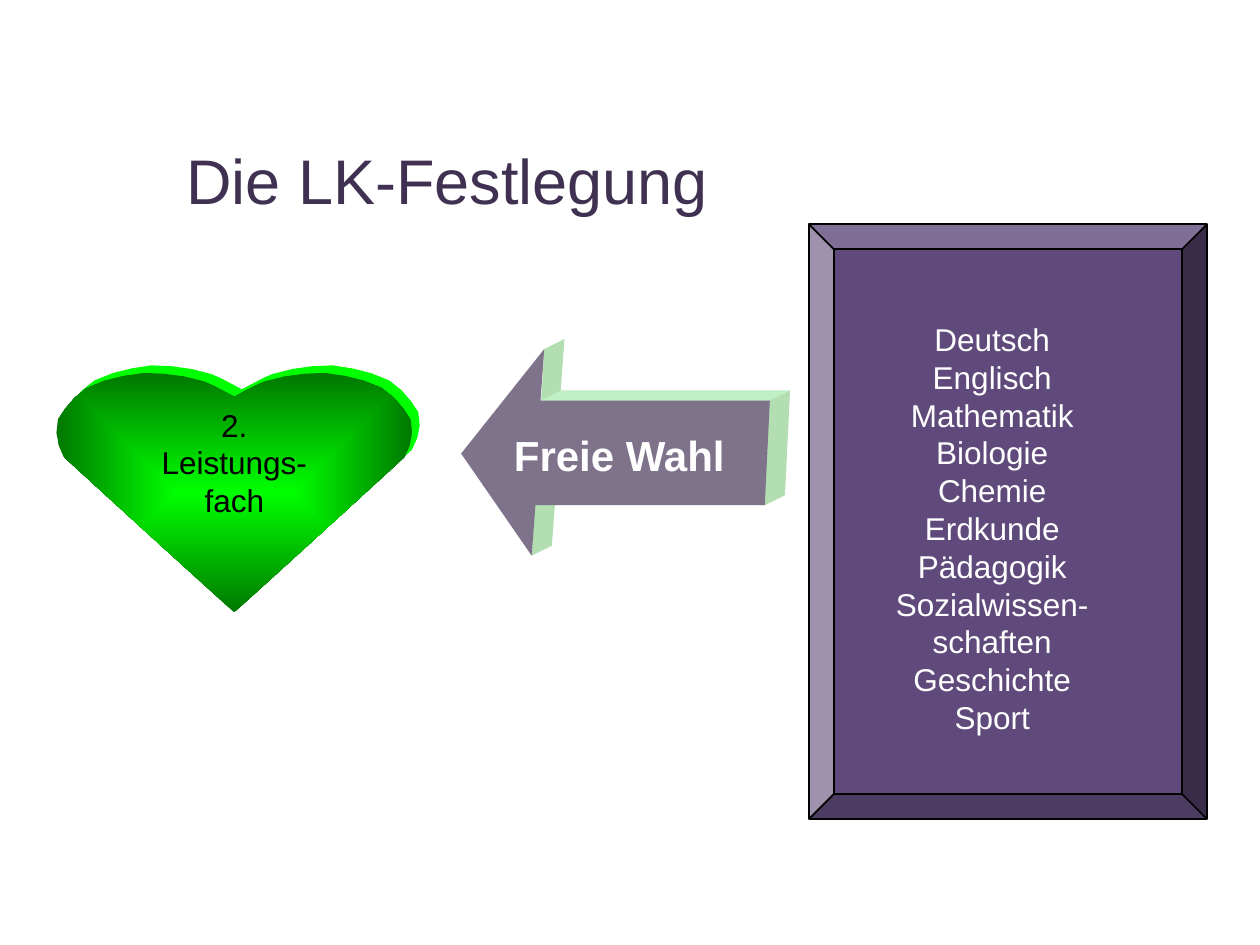
from dataclasses import dataclass

from lxml import etree
from pptx import Presentation
from pptx.dml.color import RGBColor
from pptx.enum import shapes, text
from pptx.oxml import ns
from pptx.util import Inches, Pt

Point = tuple[float, float]

BLACK = RGBColor(0x00, 0x00, 0x00)
WHITE = RGBColor(0xFF, 0xFF, 0xFF)
TITLE_PURPLE = RGBColor(0x40, 0x31, 0x52)
PANEL_PURPLE = RGBColor(0x60, 0x4A, 0x7B)
ARROW_PURPLE = RGBColor(0x7F, 0x72, 0x8B)
ARROW_SIDE = RGBColor(0xB2, 0xDE, 0xB2)
ARROW_TOP = RGBColor(0xC0, 0xF0, 0xC5)
BRIGHT_GREEN = RGBColor(0x00, 0xFF, 0x00)
DARK_GREEN = RGBColor(0x00, 0x78, 0x00)

HEART_NOTCH = (1.86, 3.15)
HEART_TIP = (1.86, 4.86)
HEART_LOBE = [
    ((1.8, 3.12), (1.68, 3.05), (1.62, 3.03)),
    ((1.46, 2.98), (1.31, 2.96), (1.14, 2.96)),
    ((0.98, 2.98), (0.83, 3.01), (0.69, 3.08)),
    ((0.58, 3.15), (0.51, 3.25), (0.46, 3.33)),
    ((0.43, 3.44), (0.46, 3.54), (0.51, 3.63)),
]
HEART_DEPTH = (0.06, -0.06)

ARROW = [(3.66, 3.6), (4.32, 2.77), (4.29, 3.18), (6.11, 3.18),
         (6.07, 4.01), (4.25, 4.01), (4.22, 4.41)]
ARROW_DEPTH = (0.16, -0.08)

SUBJECTS = ["Deutsch", "Englisch", "Mathematik", "Biologie", "Chemie", "Erdkunde",
            "Pädagogik", "Sozialwissen-", "schaften", "Geschichte", "Sport"]


@dataclass
class Label:
    box: tuple[float, float, float, float]
    lines: list[str]
    size: int
    color: RGBColor
    bold: bool = False
    centered: bool = False
    wrap: bool = False


LABELS = [
    Label((1.38, 1.07, 4.38, 0.71), ["Die LK-Festlegung"], 36, TITLE_PURPLE),
    Label((6.65, 2.49, 2.45, 3.43), SUBJECTS, 18, WHITE, centered=True, wrap=True),
    Label((3.98, 3.36, 1.89, 0.5), ["Freie Wahl"], 24, WHITE, bold=True),
]


def shift(points: list[Point], depth: Point) -> list[Point]:
    return [(x + depth[0], y + depth[1]) for x, y in points]


def heart_outline(steps: int = 3) -> list[Point]:
    left = [HEART_NOTCH]
    for first, second, end in HEART_LOBE:
        curve = (left[-1], first, second, end)
        for step in range(1, steps + 1):
            t = step / steps
            weights = ((1 - t) ** 3, 3 * t * (1 - t) ** 2, 3 * t * t * (1 - t), t ** 3)
            left.append(tuple(sum(w * p[axis] for w, p in zip(weights, curve))
                              for axis in (0, 1)))
    right = [(2 * HEART_NOTCH[0] - x, y) for x, y in reversed(left[1:])]
    return left + [HEART_TIP] + right


def add_polygon(slide, points: list[Point], color: RGBColor):
    corners = [(Inches(x), Inches(y)) for x, y in points]
    builder = slide.shapes.build_freeform(*corners[0])
    builder.add_line_segments(corners[1:], close=True)
    polygon = builder.convert_to_shape()
    polygon.shadow.inherit = False
    polygon.fill.solid()
    polygon.fill.fore_color.rgb = color
    polygon.line.fill.background()
    return polygon


def write_lines(frame, lines: list[str], size: int, color: RGBColor,
                bold: bool, centered: bool) -> None:
    for index, line in enumerate(lines):
        paragraph = frame.add_paragraph() if index else frame.paragraphs[0]
        paragraph.text = line
        paragraph.alignment = text.PP_ALIGN.CENTER if centered else text.PP_ALIGN.LEFT
        paragraph.font.name = "Arial"
        paragraph.font.size = Pt(size)
        paragraph.font.bold = bold
        paragraph.font.color.rgb = color


def add_label(slide, label: Label) -> None:
    frame = slide.shapes.add_textbox(*map(Inches, label.box)).text_frame
    frame.word_wrap = label.wrap
    write_lines(frame, label.lines, label.size, label.color, label.bold, label.centered)


def add_heart(slide) -> None:
    outline = heart_outline()
    add_polygon(slide, shift(outline, HEART_DEPTH), BRIGHT_GREEN)
    heart = add_polygon(slide, outline, DARK_GREEN)
    heart.fill.gradient()
    for stop, color in zip(heart.fill.gradient_stops, (BRIGHT_GREEN, DARK_GREEN)):
        stop.color.rgb = color
    linear = heart.element.spPr.find(".//" + ns.qn("a:lin"))
    radial = etree.Element(ns.qn("a:path"), {"path": "shape"})
    etree.SubElement(radial, ns.qn("a:fillToRect"),
                     {side: "50000" for side in "ltrb"})
    linear.getparent().replace(linear, radial)
    frame = heart.text_frame
    frame.word_wrap = True
    frame.vertical_anchor = text.MSO_ANCHOR.MIDDLE
    frame.margin_left = frame.margin_right = Inches(0.78)
    frame.margin_top, frame.margin_bottom = Inches(0), Inches(0.48)
    write_lines(frame, ["2. Leistungs-", "fach"], 18, BLACK, False, True)


def add_panel(slide) -> None:
    panel = slide.shapes.add_shape(shapes.MSO_SHAPE.BEVEL, Inches(6.42), Inches(1.78),
                                   Inches(3.16), Inches(4.72))
    panel.adjustments[0] = 0.063
    panel.shadow.inherit = False
    panel.fill.solid()
    panel.fill.fore_color.rgb = PANEL_PURPLE
    panel.line.color.rgb = BLACK
    panel.line.width = Pt(1)


def add_arrow(slide) -> None:
    back = shift(ARROW, ARROW_DEPTH)
    add_polygon(slide, [ARROW[1], *back[1:5], ARROW[4], *back[5:], ARROW[6]], ARROW_SIDE)
    add_polygon(slide, [ARROW[2], back[2], back[3], ARROW[3]], ARROW_TOP)
    add_polygon(slide, ARROW, ARROW_PURPLE)


def main() -> None:
    deck = Presentation()
    deck.slide_width, deck.slide_height = Inches(10), Inches(7.5)
    slide = deck.slides.add_slide(deck.slide_layouts[6])
    add_heart(slide)
    add_panel(slide)
    add_arrow(slide)
    for label in LABELS:
        add_label(slide, label)
    deck.save("out.pptx")


if __name__ == "__main__":
    main()
